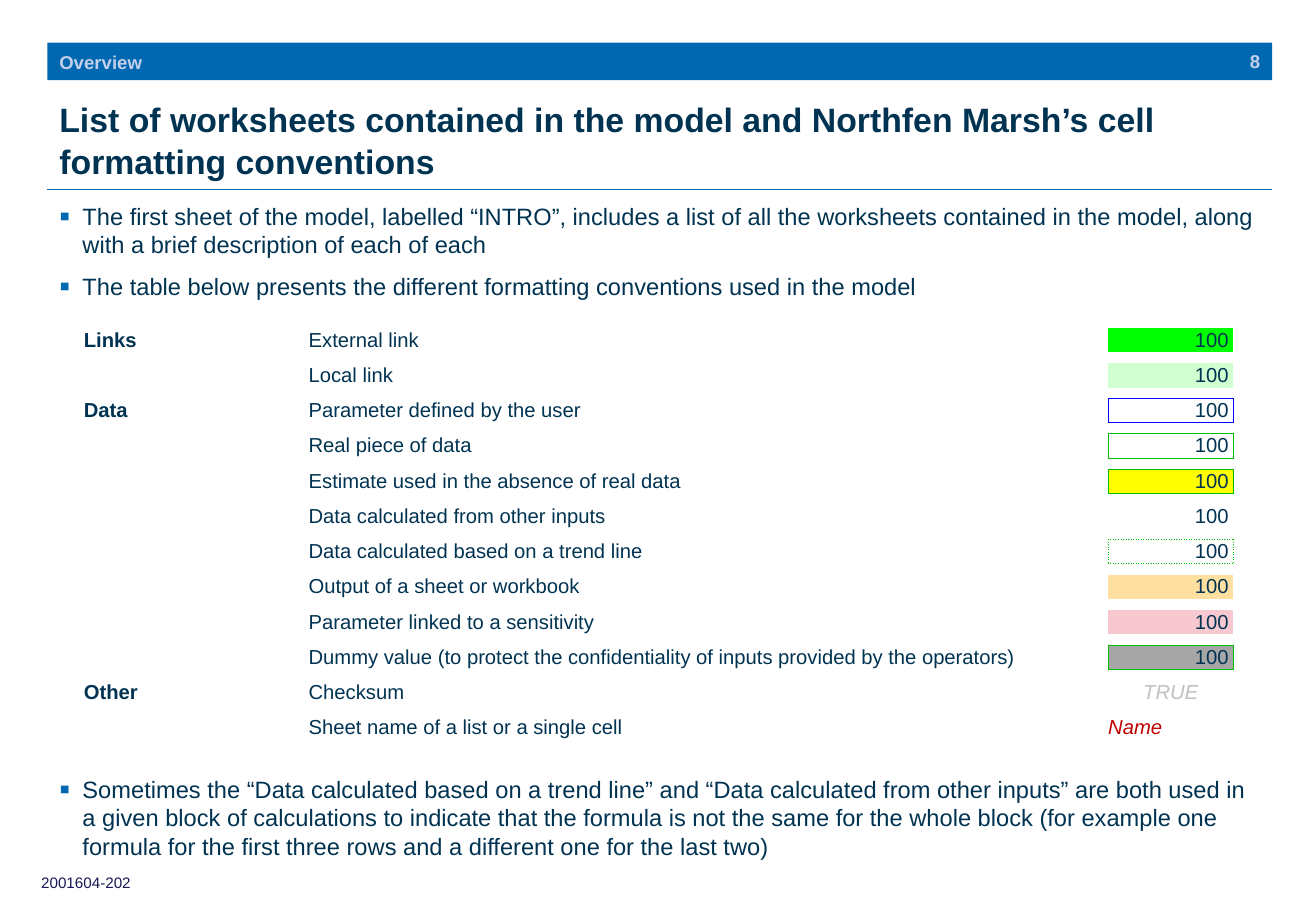
from lxml import etree
from pptx import Presentation
from pptx.dml.color import RGBColor
from pptx.enum.shapes import MSO_CONNECTOR, MSO_SHAPE
from pptx.enum.text import MSO_ANCHOR, PP_ALIGN
from pptx.oxml.ns import qn
from pptx.util import Inches, Pt

LEFT, CENTER, RIGHT = PP_ALIGN.LEFT, PP_ALIGN.CENTER, PP_ALIGN.RIGHT
TOP, MIDDLE = MSO_ANCHOR.TOP, MSO_ANCHOR.MIDDLE
RECTANGLE, STRAIGHT = MSO_SHAPE.RECTANGLE, MSO_CONNECTOR.STRAIGHT

COLORS = {
    "blue": "0067B1", "navy": "003352", "pale": "C4D0E9", "indigo": "191756",
    "user": "0000FF", "data": "00C000", "external": "00FF00", "local": "D0FFD0",
    "estimate": "FFFF00", "output": "FFE0A0", "sensitivity": "F7C8CF",
    "dummy": "A6A6A6", "checksum": "C0C0C0", "name": "C00000",
}

SECTION = "Overview"
PAGE = "8"
REFERENCE = "2001604-202"
TITLE = ("List of worksheets contained in the model and Northfen Marsh’s cell "
         "formatting conventions")
INTRO = [
    "The first sheet of the model, labelled “INTRO”, includes a list of all the "
    "worksheets contained in the model, along with a brief description of each of each",
    "The table below presents the different formatting conventions used in the model",
]
REMARK = [
    "Sometimes the “Data calculated based on a trend line” and “Data calculated from "
    "other inputs” are both used in a given block of calculations to indicate that the "
    "formula is not the same for the whole block (for example one formula for the first "
    "three rows and a different one for the last two)",
]
CONVENTIONS = [
    ("Links", "External link", "100", {"fill": "external"}),
    ("", "Local link", "100", {"fill": "local"}),
    ("Data", "Parameter defined by the user", "100", {"border": "user"}),
    ("", "Real piece of data", "100", {"border": "data"}),
    ("", "Estimate used in the absence of real data", "100",
     {"fill": "estimate", "border": "data"}),
    ("", "Data calculated from other inputs", "100", {}),
    ("", "Data calculated based on a trend line", "100",
     {"border": "data", "dash": "sysDot"}),
    ("", "Output of a sheet or workbook", "100", {"fill": "output"}),
    ("", "Parameter linked to a sensitivity", "100", {"fill": "sensitivity"}),
    ("", "Dummy value (to protect the confidentiality of inputs provided by the operators)",
     "100", {"fill": "dummy", "border": "data"}),
    ("Other", "Checksum", "TRUE", {"color": "checksum", "italic": True, "align": CENTER}),
    ("", "Sheet name of a list or a single cell", "Name",
     {"color": "name", "italic": True, "align": LEFT}),
]

WIDTH, HEIGHT = 10.83, 7.5
MARGIN, CONTENT_WIDTH = 0.39, 10.08
BAR_TOP, BAR_HEIGHT = 0.35, 0.31
RULE_TOP = 1.56
COLUMNS = [1.85, 6.58, 1.03]
TABLE_LEFT, TABLE_TOP = 0.69, 2.7
ROW_HEIGHT, GAP_HEIGHT = 0.19, 0.09
NO_STYLE = "{2D5ABB26-0587-4C30-8999-92F81FD0307C}"


def rgb(color):
    return RGBColor.from_string(COLORS[color])


def style(paragraph, color="navy", **formats):
    for attribute, value in {"name": "Arial", **formats}.items():
        setattr(paragraph.font, attribute, value)
    paragraph.font.color.rgb = rgb(color)


def add_bullet(paragraph):
    properties = paragraph._p.get_or_add_pPr()
    properties.set("marL", str(Inches(0.19)))
    properties.set("indent", str(-Inches(0.19)))
    tint = etree.SubElement(properties, qn("a:buClr"))
    etree.SubElement(tint, qn("a:srgbClr"), val=COLORS["blue"])
    etree.SubElement(properties, qn("a:buSzPct"), val="130000")
    etree.SubElement(properties, qn("a:buFont"), typeface="Arial")
    etree.SubElement(properties, qn("a:buChar"), char="▪")
    paragraph.space_after = Pt(8)


def add_text(box, lines, anchor=MIDDLE, wrap=True, align=LEFT, spacing=None,
             bullets=False, **formats):
    frame = slide.shapes.add_textbox(*map(Inches, box)).text_frame
    frame.word_wrap, frame.vertical_anchor = wrap, anchor
    for index, line in enumerate(lines):
        paragraph = frame.add_paragraph() if index else frame.paragraphs[0]
        if bullets:
            add_bullet(paragraph)
        paragraph.text, paragraph.alignment = line, align
        if spacing:
            paragraph.line_spacing = spacing
        style(paragraph, **formats)


def add_borders(cell, color, dash="solid"):
    properties = cell._tc.get_or_add_tcPr()
    for index, side in enumerate(("lnL", "lnR", "lnT", "lnB")):
        edge = etree.Element(qn("a:" + side), w=str(Pt(0.5)))
        paint = etree.SubElement(edge, qn("a:solidFill"))
        etree.SubElement(paint, qn("a:srgbClr"), val=COLORS[color])
        etree.SubElement(edge, qn("a:prstDash"), val=dash)
        properties.insert(index, edge)


def fill_cell(cell, text="", size=12, fill=None, border=None, dash="solid",
              align=LEFT, **formats):
    cell.margin_left = cell.margin_top = cell.margin_bottom = 0
    cell.margin_right = Inches(0.04) if align == RIGHT else 0
    cell.vertical_anchor = MIDDLE
    if fill:
        cell.fill.solid()
        cell.fill.fore_color.rgb = rgb(fill)
    else:
        cell.fill.background()
    if border:
        add_borders(cell, border, dash)
    paragraph = cell.text_frame.paragraphs[0]
    paragraph.text, paragraph.alignment = text, align
    style(paragraph, size=Pt(size), **formats)
    if not text:
        etree.SubElement(paragraph._p, qn("a:endParaRPr"), sz=str(size * 100))


prs = Presentation()
prs.slide_width, prs.slide_height = Inches(WIDTH), Inches(HEIGHT)
slide = prs.slides.add_slide(prs.slide_layouts[6])

bar = slide.shapes.add_shape(RECTANGLE, *map(
    Inches, (MARGIN, BAR_TOP, CONTENT_WIDTH, BAR_HEIGHT)))
bar.shadow.inherit = False
bar.fill.solid()
bar.fill.fore_color.rgb = rgb("blue")
bar.line.fill.background()

rule = slide.shapes.add_connector(STRAIGHT, *map(
    Inches, (MARGIN, RULE_TOP, MARGIN + CONTENT_WIDTH, RULE_TOP)))
rule.line.color.rgb = rgb("blue")
rule.line.width = Pt(1)
etree.SubElement(rule._element.spPr, qn("a:effectLst"))

heading = {"size": Pt(11), "bold": True, "color": "pale", "wrap": False}
add_text((MARGIN, BAR_TOP + 0.01, 3.54, BAR_HEIGHT), [SECTION], **heading)
add_text((9.61, BAR_TOP, 0.86, BAR_HEIGHT), [PAGE], align=RIGHT, **heading)
add_text((MARGIN, 0.73, CONTENT_WIDTH, RULE_TOP - 0.73), [TITLE],
         spacing=Pt(25), size=Pt(20), bold=True)
for top, height, points in ((1.61, 1, INTRO), (6.33, 0.8, REMARK)):
    add_text((MARGIN, top, CONTENT_WIDTH, height), points, anchor=TOP,
             bullets=True, size=Pt(14))
add_text((0.24, 7.14, 0.95, 0.25), [REFERENCE], anchor=TOP, wrap=False,
         size=Pt(9), color="indigo")

row_count = 2 * len(CONVENTIONS) - 1
table_height = len(CONVENTIONS) * (ROW_HEIGHT + GAP_HEIGHT) - GAP_HEIGHT
conventions = slide.shapes.add_table(row_count, len(COLUMNS), *map(
    Inches, (TABLE_LEFT, TABLE_TOP, sum(COLUMNS), table_height))).table
conventions.first_row = conventions.horz_banding = False
conventions._tbl.tblPr.find(qn("a:tableStyleId")).text = NO_STYLE
for column, width in zip(conventions.columns, COLUMNS):
    column.width = Inches(width)
for index, row in enumerate(conventions.rows):
    is_gap = index % 2
    row.height = Inches(GAP_HEIGHT if is_gap else ROW_HEIGHT)
    if is_gap:
        for cell in row.cells:
            fill_cell(cell, size=1)
        continue
    group, meaning, sample, formats = CONVENTIONS[index // 2]
    group_cell, meaning_cell, sample_cell = row.cells
    fill_cell(group_cell, group, bold=True)
    fill_cell(meaning_cell, meaning)
    fill_cell(sample_cell, sample, **{"align": RIGHT, **formats})

prs.save("out.pptx")
